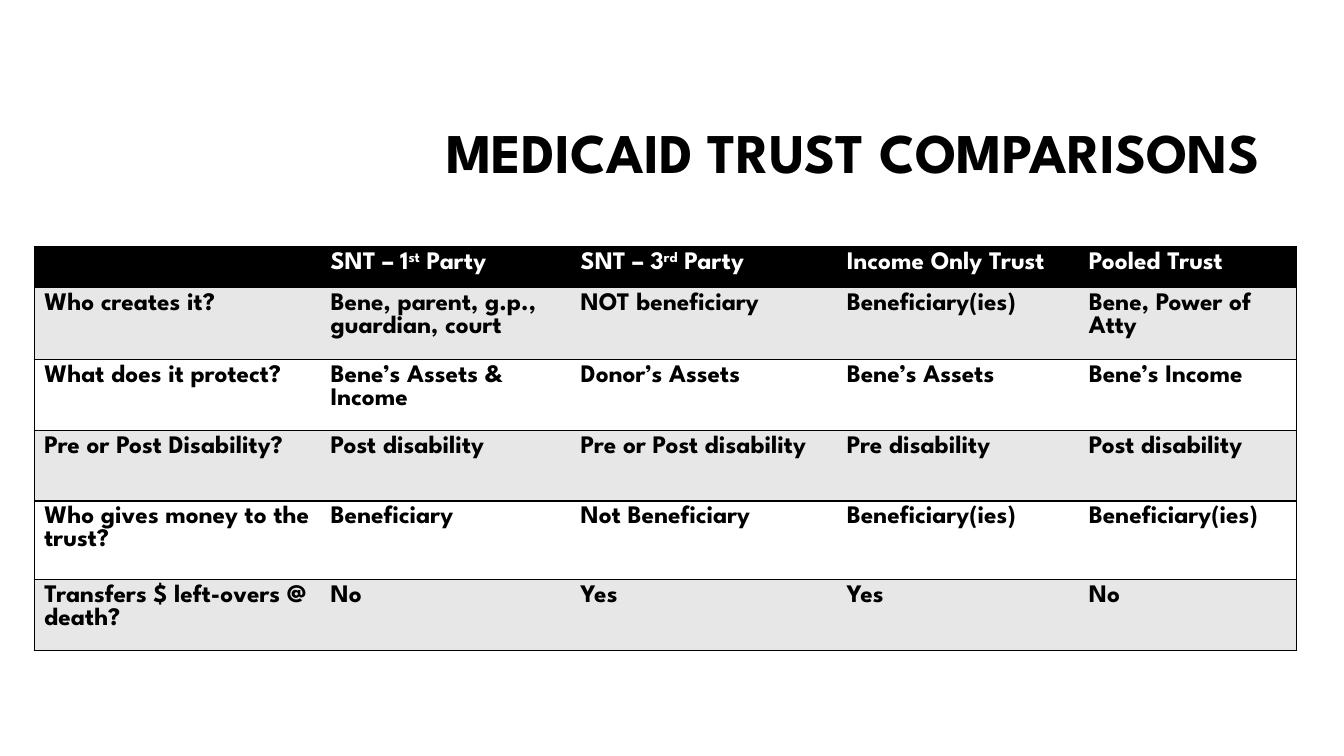
"""Build a one-slide comparison table of Medicaid trusts."""
from dataclasses import dataclass

from lxml.etree import SubElement
from pptx import Presentation
from pptx.dml.color import RGBColor as RGB
from pptx.enum.text import MSO_ANCHOR as Anchor, PP_ALIGN as Align
from pptx.oxml.ns import qn
from pptx.util import Inches, Pt

TITLE = "MEDICAID TRUST COMPARISONS"
HEADER = [
    [],
    ["SNT – 1", ("st", 30), " Party"],
    ["SNT – 3", ("rd", 30), " Party"],
    ["Income Only Trust"],
    ["Pooled Trust"],
]
BODY = [
    ["Who creates it?", "Bene, parent, g.p., guardian, court", "NOT beneficiary",
     "Beneficiary(ies)", "Bene, Power of Atty"],
    ["What does it protect?", "Bene’s Assets & Income", "Donor’s Assets",
     "Bene’s Assets", "Bene’s Income"],
    ["Pre or Post Disability?", "Post disability", "Pre or Post disability",
     "Pre disability", "Post disability"],
    ["Who gives money to the trust?", "Beneficiary", "Not Beneficiary",
     "Beneficiary(ies)", "Beneficiary(ies)"],
    ["Transfers $ left-overs @ death?", "No", "Yes", "Yes", "No"],
]
COL_WIDTHS = [2.84, 2.48, 2.64, 2.4, 2.16]
ROW_HEIGHTS = [0.4, 0.72, 0.7, 0.7, 0.78, 0.7]


@dataclass(frozen=True)
class Theme:
    font: str = "League Spartan"
    black: str = "000000"
    white: str = "FFFFFF"
    band: str = "E7E7E7"
    title_size: int = 40
    cell_size: int = 18
    border: int = 1


THEME = Theme()


def add_run(p, text, size, color, baseline=0):
    r = p.add_run()
    r.text = text
    r.font.name, r.font.size, r.font.bold = THEME.font, Pt(size), True
    r.font.color.rgb = RGB.from_string(color)
    if baseline:
        r.font._element.set("baseline", str(baseline * 1000))


def set_borders(cell, sides):
    tc_pr = cell._tc.get_or_add_tcPr()
    for side in "LRTB":
        ln = SubElement(tc_pr, qn(f"a:ln{side}"), w=str(Pt(THEME.border)))
        if side in sides:
            fill = SubElement(ln, qn("a:solidFill"))
            SubElement(fill, qn("a:srgbClr"), val=THEME.black)
        else:
            SubElement(ln, qn("a:noFill"))


def add_title(slide):
    box = slide.shapes.add_textbox(Inches(3.17), Inches(0.84), Inches(9.42), Inches(1.41))
    tf = box.text_frame
    tf.word_wrap, tf.vertical_anchor = True, Anchor.MIDDLE
    p = tf.paragraphs[0]
    p.alignment, p.line_spacing = Align.RIGHT, 0.9
    add_run(p, TITLE, THEME.title_size, THEME.black)


def add_comparison(slide):
    rows = [HEADER] + [[[text] for text in row] for row in BODY]
    last = len(COL_WIDTHS) - 1
    table = slide.shapes.add_table(
        len(rows), len(COL_WIDTHS), Inches(0.34), Inches(2.45),
        Inches(sum(COL_WIDTHS)), Inches(sum(ROW_HEIGHTS))).table
    for col, width in zip(table.columns, COL_WIDTHS):
        col.width = Inches(width)
    for i, (row, height) in enumerate(zip(rows, ROW_HEIGHTS)):
        table.rows[i].height = Inches(height)
        color = THEME.black if i else THEME.white
        fill = (THEME.band if i % 2 else THEME.white) if i else THEME.black
        for j, parts in enumerate(row):
            cell = table.cell(i, j)
            set_borders(cell, "TB" + "L" * (j == 0) + "R" * (j == last))
            cell.fill.solid()
            cell.fill.fore_color.rgb = RGB.from_string(fill)
            p = cell.text_frame.paragraphs[0]
            for part in parts:
                text, baseline = part if isinstance(part, tuple) else (part, 0)
                add_run(p, text, THEME.cell_size, color, baseline)


def main():
    prs = Presentation()
    prs.slide_width, prs.slide_height = Inches(13.33), Inches(7.5)
    slide = prs.slides.add_slide(prs.slide_layouts[6])
    add_title(slide)
    add_comparison(slide)
    prs.save("out.pptx")


if __name__ == "__main__":
    main()
